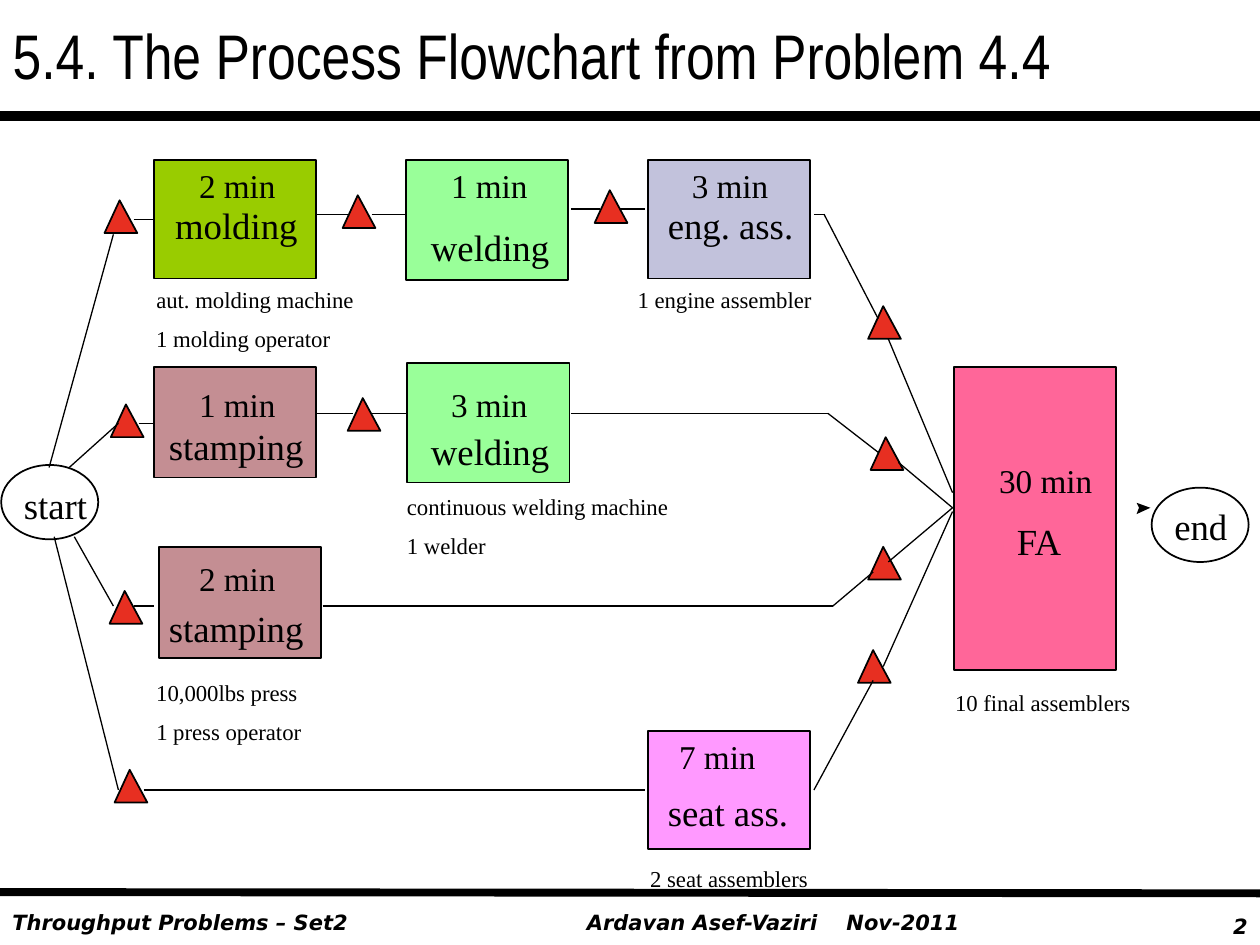
from dataclasses import dataclass
from itertools import pairwise
from lxml import etree
from pptx import Presentation
from pptx import util as u
from pptx.dml.color import RGBColor
from pptx.enum import shapes, text
from pptx.oxml.ns import qn

WIDTH, HEIGHT = u.Inches(10), u.Inches(7.5)
COLUMNS, ROWS = 100, 75
SERIF, SANS, NARROW = "Times New Roman", "DejaVu Sans", "Arial Narrow"
NAME_SIZE, TIME_SIZE, CAPTION_SIZE = 21, 19, 13
LABEL_SLACK = 0.4
CAPTION_STEP = 3.1
BUFFER_SIZE, BUFFER_PEAK = 2.6, 1.2

BLACK = RGBColor(0x00, 0x00, 0x00)
RED = RGBColor(0xE7, 0x2F, 0x21)
OLIVE = RGBColor(0x99, 0xCC, 0x00)
GREEN = RGBColor(0x99, 0xFF, 0x99)
LAVENDER = RGBColor(0xC2, 0xC2, 0xDC)
BROWN = RGBColor(0xC4, 0x8E, 0x93)
ORCHID = RGBColor(0xFF, 0x99, 0xFF)
PINK = RGBColor(0xFF, 0x66, 0x99)

Point = tuple[float, float]


@dataclass(frozen=True)
class Area:
    column: float
    row: float
    width: float
    height: float


@dataclass(frozen=True)
class Label:
    words: str
    column: float
    row: float
    width: float


@dataclass(frozen=True)
class Station:
    area: Area
    fill: RGBColor
    minutes: Label
    name: Label


@dataclass(frozen=True)
class Terminal:
    area: Area
    name: Label


@dataclass(frozen=True)
class Footer:
    words: str
    area: Area
    align: text.PP_ALIGN = text.PP_ALIGN.LEFT


STATIONS = [
    Station(Area(12.2, 12.7, 12.9, 9.4), OLIVE,
            Label("2 min", 15.8, 13.1, 6.1), Label("molding", 13.9, 16.1, 9.7)),
    Station(Area(32.2, 12.7, 12.9, 9.5), GREEN,
            Label("1 min", 35.8, 13.1, 6.1), Label("welding", 34.2, 17.8, 9.4)),
    Station(Area(51.4, 12.7, 12.9, 9.4), LAVENDER,
            Label("3 min", 54.9, 13.1, 6.1), Label("eng. ass.", 53, 16.1, 10)),
    Station(Area(12.2, 29.1, 12.9, 8.8), BROWN,
            Label("1 min", 15.8, 30.5, 6.1), Label("stamping", 13.4, 33.6, 10.7)),
    Station(Area(32.3, 28.8, 12.9, 9.5), GREEN,
            Label("3 min", 35.8, 30.5, 6.1), Label("welding", 34.2, 34, 9.4)),
    Station(Area(12.6, 43.4, 12.9, 8.8), BROWN,
            Label("2 min", 15.8, 44.3, 6.1), Label("stamping", 13.4, 48.1, 10.7)),
    Station(Area(51.4, 58, 12.9, 9.4), ORCHID,
            Label("7 min", 53.9, 58.4, 6.1), Label("seat ass.", 53, 62.7, 9.6)),
    Station(Area(75.7, 29.1, 12.9, 24.1), PINK,
            Label("30 min", 79.3, 36.5, 7.4), Label("FA", 80.7, 41.2, 3.7)),
]
TERMINALS = [
    Terminal(Area(0.1, 36.9, 7.7, 5.9), Label("start", 1.9, 38.3, 5)),
    Terminal(Area(91.4, 38.7, 7.7, 5.9), Label("end", 93.2, 40, 4.2)),
]
CAPTIONS = [
    Label("aut. molding machine", 12.4, 22.7, 15.7),
    Label("1 molding operator", 12.4, 22.7 + CAPTION_STEP, 13.9),
    Label("10,000lbs press", 12.4, 53.9, 11.2),
    Label("1 press operator", 12.4, 53.9 + CAPTION_STEP, 11.5),
    Label("continuous welding machine", 32.3, 39.1, 20.7),
    Label("1 welder", 32.3, 39.1 + CAPTION_STEP, 6.3),
    Label("2 seat assemblers", 51.6, 68.6, 12.5),
    Label("1 engine assembler", 50.6, 22.7, 13.8),
    Label("10 final assemblers", 75.8, 54.7, 13.9),
]
BUFFERS: list[Point] = [
    (8.3, 15.9), (27.2, 15.5), (47.2, 15.1), (68.9, 24.3),
    (8.8, 32.1), (27.6, 31.6), (69.1, 34.7),
    (8.7, 46.9), (68.9, 43.4),
    (9.1, 61.1), (68.1, 51.6),
]
ROUTES: list[list[Point]] = [
    [(9, 18.6), (3.9, 37.1)], [(10.6, 17.4), (12.2, 17.4)],
    [(25.2, 17), (27.6, 17)], [(29.5, 17), (32.3, 17)],
    [(45.3, 16.6), (47.6, 16.6)], [(49.2, 16.6), (51.2, 16.6)],
    [(64.6, 17), (65.4, 17), (69.7, 25.3)], [(70.5, 26.9), (75.6, 39.1)],
    [(9.4, 33.6), (5.5, 37.1)], [(11, 33.6), (12.2, 33.6)],
    [(25.2, 32.8), (28, 32.8)], [(29.5, 32.8), (32.3, 32.8)],
    [(45.3, 32.8), (65.7, 32.8), (69.7, 35.9)], [(71.3, 36.7), (75.6, 40.3)],
    [(5.9, 42.6), (9, 48.1)], [(10.6, 48.1), (12.2, 48.1)],
    [(25.6, 48.1), (66.1, 48.1), (69.3, 45.4)], [(70.5, 44.6), (75.6, 40.3)],
    [(4.3, 42.6), (9.4, 62.7)], [(11.4, 62.7), (51.2, 62.7)],
    [(69.3, 54), (64.6, 62.7)], [(75.6, 40.6), (70.1, 52.9)],
]
ARROWHEAD: list[Point] = [(90.2, 40.8), (90.4, 40.3), (90.2, 39.9), (91.3, 40.3)]
FOOTERS = [
    Footer("2", Area(92.5, 72, 7.5, 3), text.PP_ALIGN.RIGHT),
    Footer("Ardavan Asef-Vaziri\tNov-2011", Area(45.6, 71.7, 33.5, 3)),
    Footer("Throughput Problems – Set2", Area(0, 71.7, 46.7, 3)),
]
DATE_TAB = 20.6


def across(columns: float) -> int:
    return round(WIDTH * columns / COLUMNS)


def down(rows: float) -> int:
    return round(HEIGHT * rows / ROWS)


def bounds(area: Area) -> tuple[int, int, int, int]:
    return across(area.column), down(area.row), across(area.width), down(area.height)


def style(frame, font: str, size: float, slanted: bool = False) -> None:
    for run in frame.paragraphs[0].runs:
        run.font.name, run.font.size = font, u.Pt(size)
        run.font.bold = run.font.italic = slanted
        run.font.color.rgb = BLACK


def draw_label(slide, label: Label, size: float) -> None:
    area = Area(label.column, label.row, label.width + LABEL_SLACK, size / 6)
    frame = slide.shapes.add_textbox(*bounds(area)).text_frame
    frame.margin_left = frame.margin_right = frame.margin_top = frame.margin_bottom = 0
    frame.word_wrap = False
    frame.auto_size = text.MSO_AUTO_SIZE.SHAPE_TO_FIT_TEXT
    frame.text = label.words
    style(frame, SERIF, size)


def paint(shape, fill: RGBColor | None, outlined: bool = True) -> None:
    shape.shadow.inherit = False
    if fill is None:
        shape.fill.background()
    else:
        shape.fill.solid()
        shape.fill.fore_color.rgb = fill
    if outlined:
        shape.line.color.rgb, shape.line.width = BLACK, u.Pt(1)
    else:
        shape.line.fill.background()


def draw_polygon(slide, corners: list[Point], fill: RGBColor, outlined: bool) -> None:
    first, *rest = [(across(c), down(r)) for c, r in corners]
    builder = slide.shapes.build_freeform(*first)
    builder.add_line_segments(rest, close=True)
    paint(builder.convert_to_shape(), fill, outlined)


def draw_buffer(slide, column: float, row: float) -> None:
    base = row + BUFFER_SIZE
    corners = [(column, base), (column + BUFFER_SIZE, base), (column + BUFFER_PEAK, row)]
    draw_polygon(slide, corners, RED, True)


def draw_route(slide, stops: list[Point], weight: float = 0.75) -> None:
    for (c1, r1), (c2, r2) in pairwise(stops):
        line = slide.shapes.add_connector(
            shapes.MSO_CONNECTOR.STRAIGHT, across(c1), down(r1), across(c2), down(r2))
        line.line.color.rgb, line.line.width = BLACK, u.Pt(weight)
        etree.SubElement(line._element.spPr, qn("a:effectLst"))


def draw_footer(slide, footer: Footer) -> None:
    frame = slide.shapes.add_textbox(*bounds(footer.area)).text_frame
    frame.word_wrap = True
    frame.text = footer.words
    paragraph = frame.paragraphs[0]
    paragraph.alignment = footer.align
    if "\t" in footer.words:
        tabs = etree.SubElement(paragraph._p.get_or_add_pPr(), qn("a:tabLst"))
        etree.SubElement(tabs, qn("a:tab"), pos=str(across(DATE_TAB)), algn="l")
    style(frame, SANS, 12, slanted=True)


def draw_title(slide, words: str) -> None:
    title = slide.shapes.title
    title.left, title.top, title.width, title.height = bounds(Area(0, 0.8, 100, 7.1))
    frame = title.text_frame
    frame.text = words
    frame.auto_size = text.MSO_AUTO_SIZE.NONE
    frame.vertical_anchor = text.MSO_ANCHOR.TOP
    frame.paragraphs[0].alignment = text.PP_ALIGN.LEFT
    style(frame, NARROW, 36)


def main() -> None:
    deck = Presentation()
    deck.slide_width, deck.slide_height = WIDTH, HEIGHT
    slide = deck.slides.add_slide(deck.slide_layouts[5])
    for footer in FOOTERS:
        draw_footer(slide, footer)
    draw_route(slide, [(0, 9.2), (100, 9.2)], 6)
    draw_route(slide, [(0, 70.8), (100, 70.9)], 4.5)
    draw_title(slide, "5.4. The Process Flowchart from Problem 4.4")
    for station in STATIONS:
        box = slide.shapes.add_shape(shapes.MSO_SHAPE.RECTANGLE, *bounds(station.area))
        paint(box, station.fill)
        draw_label(slide, station.minutes, TIME_SIZE)
        draw_label(slide, station.name, NAME_SIZE)
    for caption in CAPTIONS:
        draw_label(slide, caption, CAPTION_SIZE)
    for terminal in TERMINALS:
        paint(slide.shapes.add_shape(shapes.MSO_SHAPE.OVAL, *bounds(terminal.area)), None)
        draw_label(slide, terminal.name, NAME_SIZE)
    draw_polygon(slide, ARROWHEAD, BLACK, False)
    for column, row in BUFFERS:
        draw_buffer(slide, column, row)
    for stops in ROUTES:
        draw_route(slide, stops)
    deck.save("out.pptx")


if __name__ == "__main__":
    main()
